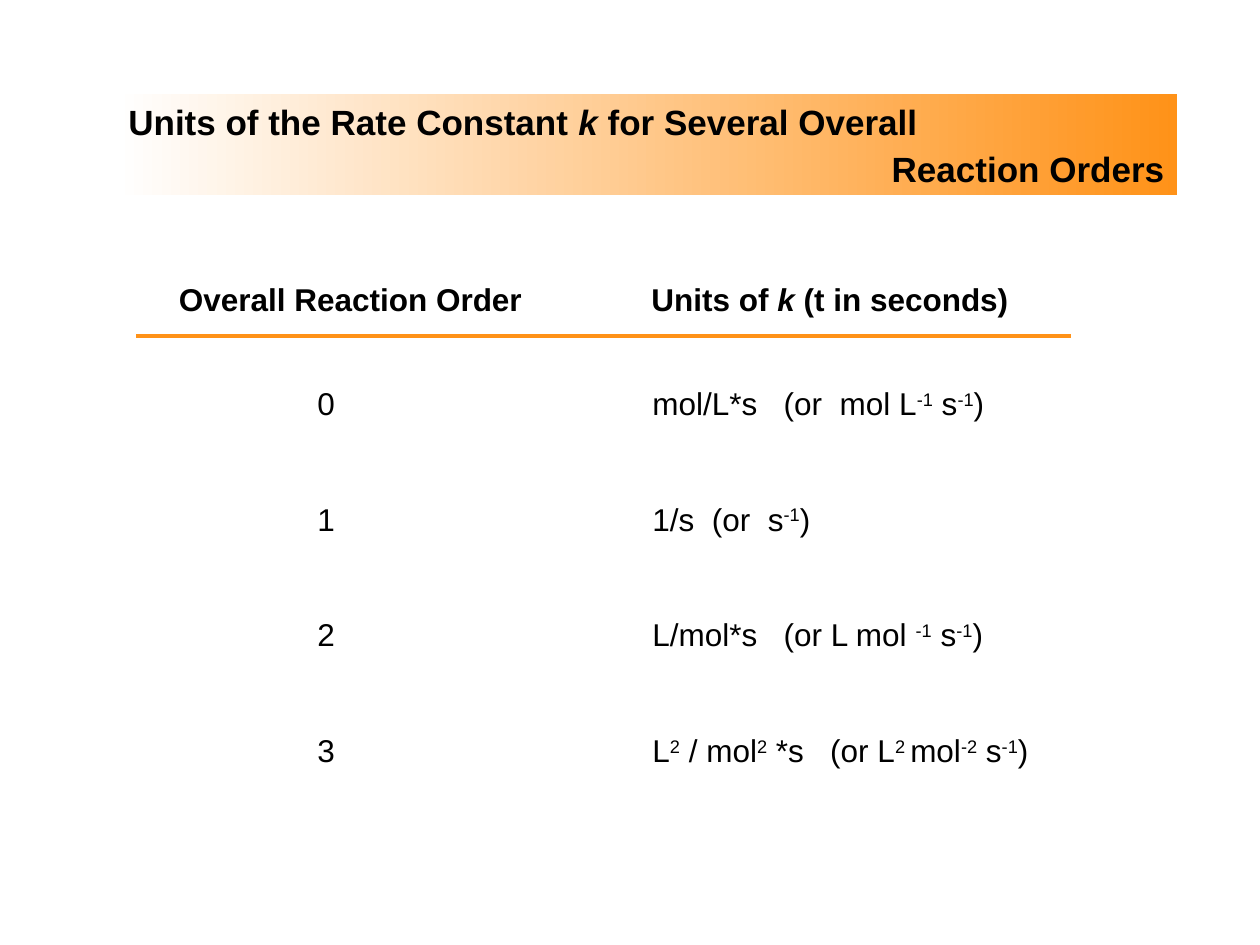
from lxml import etree
from pptx import Presentation
from pptx import util as u
from pptx.dml import color
from pptx.enum import shapes, text
from pptx.oxml import ns

ORANGE, BLACK, WHITE = "FF9218", "000000", "FFFFFF"
LEFT, RIGHT = text.PP_ALIGN.LEFT, text.PP_ALIGN.RIGHT

# Run lists alternate: plain, marked, plain, marked, ...
TITLE = [
    (["Units of the Rate Constant ", "k", " for Several Overall"], LEFT),
    (["Reaction Orders"], RIGHT),
]
HEADS = [["Overall Reaction Order"], ["Units of ", "k", " (t in seconds)"]]
ROWS = [
    ("0", 3.08, ["mol/L*s   (or  mol L", "-1", " s", "-1", ")"]),
    ("1", 2.33, ["1/s  (or  s", "-1", ")"]),
    ("2", 3.33, ["L/mol*s   (or L mol ", "-1", " s", "-1", ")"]),
    ("3", 3.66, ["L", "2", " / mol", "2", " *s   (or L", "2 ", "mol",
                 "-2", " s", "-1", ")"]),
]


def rgb(code):
    return color.RGBColor.from_string(code)


def italic(run):
    run.font.italic = True


def raised(run):
    run.font._element.set("baseline", "30000")


def write(para, parts, size, gap, mark, bold=False, align=LEFT):
    para.space_before = u.Pt(gap)
    para.alignment = align
    for i, part in enumerate(parts):
        run = para.add_run()
        run.text = part
        font = run.font
        font.name, font.size, font.bold = "Arial", u.Pt(size), bold
        font.color.rgb = rgb(BLACK)
        if i % 2:
            mark(run)


def label(home, left, top, width, parts, gap, mark, pad=0.1, bold=False):
    box = home.add_textbox(u.Inches(left), u.Inches(top),
                           u.Inches(width), u.Inches(0.4))
    frame = box.text_frame
    frame.word_wrap = True
    frame.margin_left = frame.margin_right = u.Inches(pad)
    write(frame.paragraphs[0], parts, 18, gap, mark, bold)


def banner(slide, left, top, width, height):
    bar = slide.shapes.add_shape(
        shapes.MSO_SHAPE.RECTANGLE, u.Inches(left), u.Inches(top),
        u.Inches(width), u.Inches(height))
    bar.shadow.inherit = False
    bar.line.fill.background()
    bar.fill.gradient()
    bar.fill.gradient_angle = 0
    for stop, code in zip(bar.fill.gradient_stops, (WHITE, ORANGE)):
        stop.color.rgb = rgb(code)
    frame = bar.text_frame
    frame.word_wrap = True
    frame.vertical_anchor = text.MSO_ANCHOR.TOP
    for i, (parts, align) in enumerate(TITLE):
        para = frame.add_paragraph() if i else frame.paragraphs[0]
        write(para, parts, 20, 2.5, italic, True, align)


def header(slide, left, top, width):
    # Column heads
    for shift, parts in zip((0.34, 4.09), HEADS):
        label(slide.shapes, left + shift, top, 2.92, parts, 11.2, italic,
              pad=0, bold=True)
    # Rule below the heads
    level = u.Inches(top + 0.5)
    rule = slide.shapes.add_connector(
        shapes.MSO_CONNECTOR.STRAIGHT, u.Inches(left), level,
        u.Inches(left + width), level)
    rule.line.color.rgb = rgb(ORANGE)
    rule.line.width = u.Pt(2.25)
    etree.SubElement(rule._element.spPr, ns.qn("a:effectLst"))


def body(slide, left, top, height):
    step = height / len(ROWS)
    for i, (order, width, units) in enumerate(ROWS):
        row = slide.shapes.add_group_shape().shapes
        level = top + i * step
        label(row, left, level, 0.33, [order], 11.2, raised)
        label(row, left + 2.66, level, width, units, 2.2, raised)


def main():
    deck = Presentation()
    deck.slide_width, deck.slide_height = u.Inches(10), u.Inches(7.5)
    slide = deck.slides.add_slide(deck.slide_layouts[6])
    banner(slide, 0.92, 0.75, 8.42, 0.8)
    header(slide, 1.08, 2.17, 7.42)
    body(slide, 2.42, 3, 3.67)
    deck.save("out.pptx")


if __name__ == "__main__":
    main()
